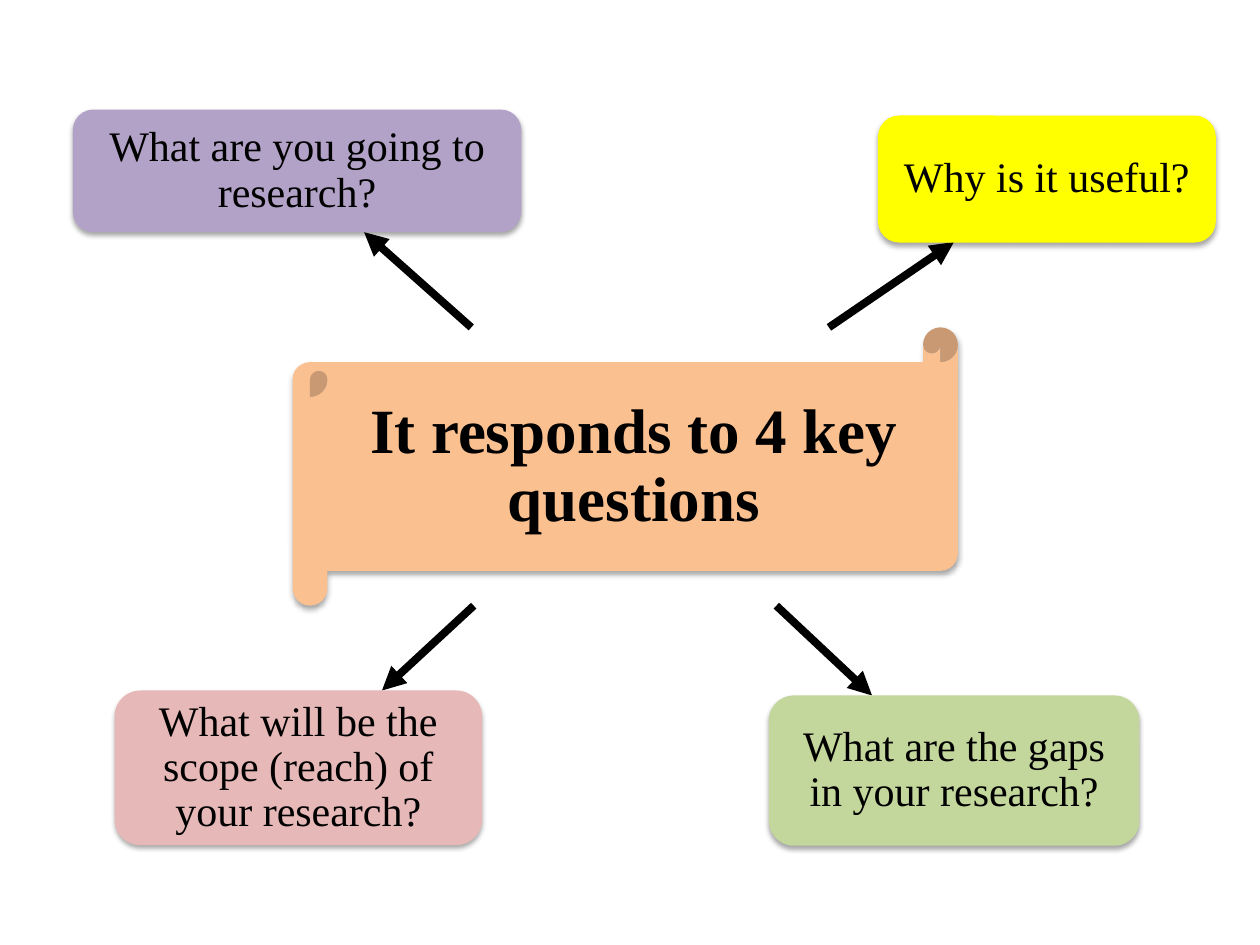
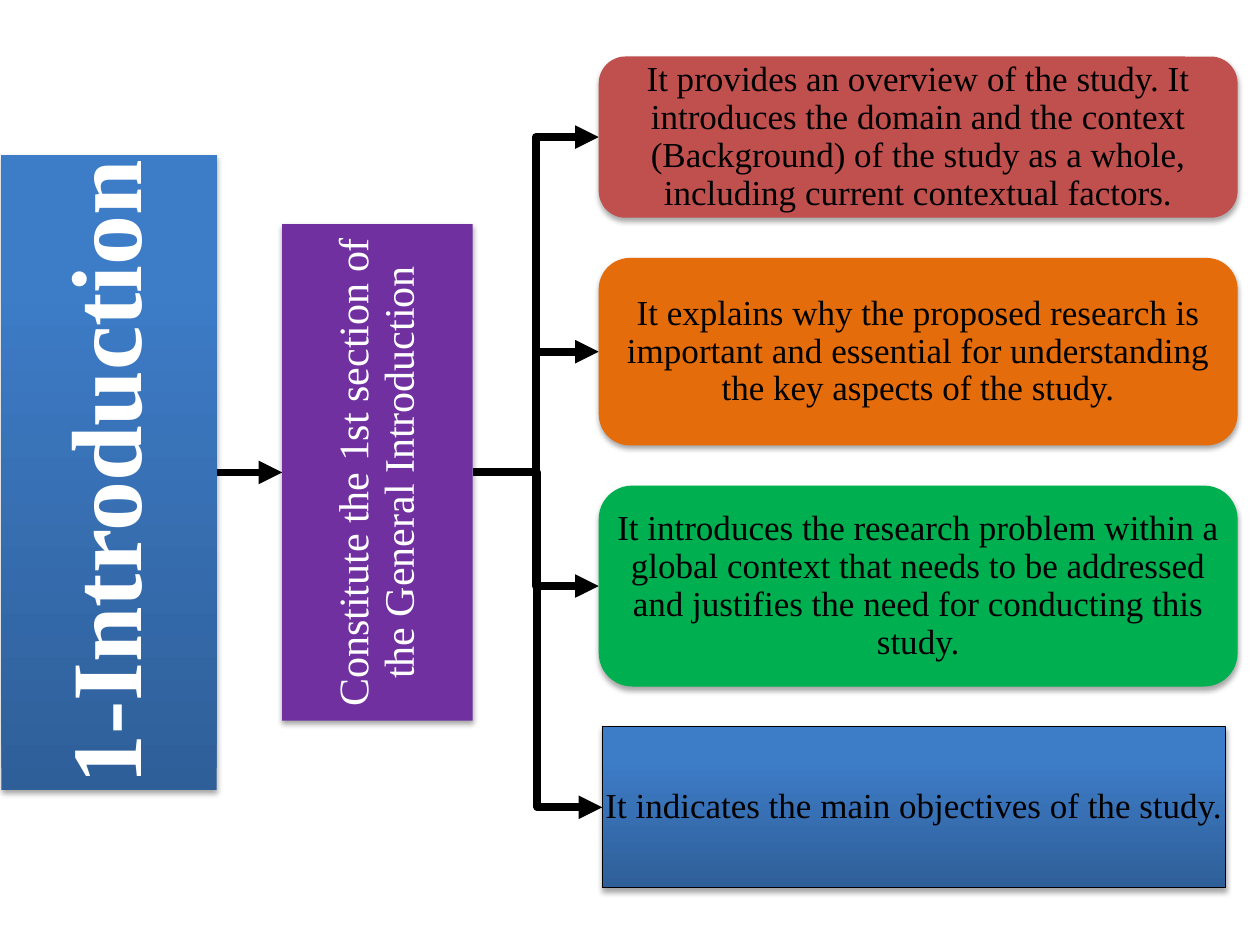
from dataclasses import dataclass
from typing import Optional

from lxml.etree import SubElement
from pptx import Presentation
from pptx.dml.color import RGBColor
from pptx.enum.shapes import MSO_CONNECTOR, MSO_SHAPE
from pptx.enum.text import MSO_ANCHOR, MSO_AUTO_SIZE, PP_ALIGN
from pptx.oxml.ns import qn
from pptx.util import Cm, Pt

FONT = "Times New Roman"
TITLE_ONLY = 5

BLACK = RGBColor(0x00, 0x00, 0x00)
WHITE = RGBColor(0xFF, 0xFF, 0xFF)
PEACH = RGBColor(0xFA, 0xC0, 0x90)
LILAC = RGBColor(0xB3, 0xA2, 0xC7)
YELLOW = RGBColor(0xFF, 0xFF, 0x00)
PINK = RGBColor(0xE6, 0xB9, 0xB8)
LIGHT_GREEN = RGBColor(0xC3, 0xD6, 0x9B)
PURPLE = RGBColor(0x70, 0x30, 0xA0)
RED = RGBColor(0xC0, 0x50, 0x4D)
ORANGE = RGBColor(0xE4, 0x6C, 0x0A)
GREEN = RGBColor(0x00, 0xB0, 0x50)
DARK_BLUE = RGBColor(0x2F, 0x5F, 0x99)
BLUE = RGBColor(0x3D, 0x7C, 0xC7)


@dataclass(frozen=True)
class Area:
    """A rectangle in centimetres."""
    left: float
    top: float
    width: float
    height: float

    @property
    def middle(self) -> float:
        return self.top + self.height / 2

    @property
    def right(self) -> float:
        return self.left + self.width

    def turned(self) -> "Area":
        """The same centre with width and height swapped."""
        shift = (self.width - self.height) / 2
        return Area(self.left + shift, self.top - shift, self.height, self.width)

    def lengths(self) -> tuple:
        return Cm(self.left), Cm(self.top), Cm(self.width), Cm(self.height)


@dataclass(frozen=True)
class Question:
    text: str
    area: Area
    color: RGBColor
    arrow_start: tuple[float, float]
    arrow_end: tuple[float, float]


@dataclass(frozen=True)
class Purpose:
    text: str
    height: float
    color: Optional[RGBColor] = None  # None gives the outlined blue gradient
    left: float = 12.07
    width: float = 12.88


QUESTIONS = [
    Question("What are you going to research?", Area(1.47, 2.21, 9.04, 2.47),
             LILAC, (9.5, 6.6), (7.34, 4.68)),
    Question("Why is it useful?", Area(17.7, 2.33, 6.81, 2.56),
             YELLOW, (16.71, 6.6), (19.23, 4.88)),
    Question("What will be the scope (reach) of your research?", Area(2.31, 13.92, 7.41, 3.12),
             PINK, (9.55, 12.21), (7.7, 13.92)),
    Question("What are the gaps in your research?", Area(15.5, 14.02, 7.47, 3.03),
             LIGHT_GREEN, (15.65, 12.21), (17.58, 14.02)),
]

PURPOSES = [
    Purpose("It provides an overview of the study. It introduces the domain and the context "
            "(Background) of the study as a whole, including current contextual factors.",
            3.25, RED),
    Purpose("It explains why the proposed research is important and essential for "
            "understanding the key aspects of the study.", 3.78, ORANGE),
    Purpose("It introduces the research problem within a global context that needs to be "
            "addressed and justifies the need for conducting this study.", 4.05, GREEN),
    Purpose("It indicates the main objectives of the study.", 3.25, left=12.14, width=12.57),
]
PURPOSE_TOP = 1.14
PURPOSE_GAP = 0.81


def write(shape, text: str, *, size: float, color: RGBColor = BLACK, bold: bool = False,
          inset: float = 0.18, upward: bool = False) -> None:
    frame = shape.text_frame
    frame.word_wrap = True
    frame.auto_size = MSO_AUTO_SIZE.NONE
    frame.vertical_anchor = MSO_ANCHOR.MIDDLE
    frame.margin_left = frame.margin_right = Cm(inset)
    frame.margin_top = frame.margin_bottom = Cm(inset)
    if upward:
        shape.element.txBody.find(qn("a:bodyPr")).set("vert", "vert270")
    paragraph = frame.paragraphs[0]
    paragraph.alignment = PP_ALIGN.CENTER
    paragraph.line_spacing = 0.9
    run = paragraph.add_run()
    run.text = text
    run.font.name = FONT
    run.font.size = Pt(size)
    run.font.bold = bold
    run.font.color.rgb = color


def paint(shape, color: Optional[RGBColor], outlined: bool) -> None:
    """Fill with a colour, or the blue gradient when there is none, over a soft shadow."""
    if color is None:
        shape.fill.gradient()
        shape.fill.gradient_angle = 90
        for stop, (position, shade) in zip(shape.fill.gradient_stops,
                                           [(0, DARK_BLUE), (0.8, BLUE)]):
            stop.position = position
            stop.color.rgb = shade
    else:
        shape.fill.solid()
        shape.fill.fore_color.rgb = color
    if outlined:
        shape.line.color.rgb = BLACK
        shape.line.width = Pt(0.75)
    else:
        shape.line.fill.background()
    shape.shadow.inherit = False
    effects = shape.element.spPr.find(qn("a:effectLst"))
    shadow = SubElement(effects, qn("a:outerShdw"), blurRad=str(Pt(3.1)), dist=str(Pt(1.8)),
                        dir="5400000", rotWithShape="0")
    shadow_color = SubElement(shadow, qn("a:srgbClr"), val=str(BLACK))
    SubElement(shadow_color, qn("a:alpha"), val="35000")


def add_box(slide, preset: MSO_SHAPE, area: Area, color: Optional[RGBColor] = None,
            outlined: bool = False):
    box = slide.shapes.add_shape(preset, *area.lengths())
    paint(box, color, outlined)
    return box


def add_arrow(slide, start: tuple[float, float], end: tuple[float, float],
              route: MSO_CONNECTOR = MSO_CONNECTOR.STRAIGHT) -> None:
    arrow = slide.shapes.add_connector(route, *(Cm(value) for value in (*start, *end)))
    arrow.line.color.rgb = BLACK
    arrow.line.width = Pt(4.5)
    properties = arrow.element.spPr
    SubElement(properties.find(qn("a:ln")), qn("a:tailEnd"), type="triangle")
    SubElement(properties, qn("a:effectLst"))


def place_title(slide, area: Area, panel):
    """Move the slide's title to the area, just in front of its panel."""
    title = slide.shapes.title
    title.left, title.top, title.width, title.height = area.lengths()
    panel.element.addnext(title.element)
    return title


def add_key_questions(deck) -> None:
    slide = deck.slides.add_slide(deck.slide_layouts[TITLE_ONLY])
    scroll = add_box(slide, MSO_SHAPE.HORIZONTAL_SCROLL, Area(5.9, 6.6, 13.41, 5.61), PEACH)
    title = place_title(slide, Area(6.6, 7.31, 12.35, 4.21), scroll)
    write(title, "It responds to 4 key questions", size=36, bold=True, inset=0.25)
    for question in QUESTIONS:
        add_arrow(slide, question.arrow_start, question.arrow_end)
        box = add_box(slide, MSO_SHAPE.ROUNDED_RECTANGLE, question.area, question.color)
        write(box, question.text, size=24)


def add_introduction(deck) -> None:
    slide = deck.slides.add_slide(deck.slide_layouts[TITLE_ONLY])
    title_area = Area(0.03, 3.12, 4.34, 12.8)
    section_area = Area(5.69, 4.52, 3.84, 10.01)
    center = section_area.middle

    panel = add_box(slide, MSO_SHAPE.RECTANGLE, title_area)
    title = place_title(slide, title_area.turned(), panel)
    title.rotation = 270
    write(title, "1-Introduction", size=57, color=WHITE, bold=True, inset=0.09)
    add_arrow(slide, (title_area.right, center), (section_area.left, center))

    top = PURPOSE_TOP
    for purpose in PURPOSES:
        area = Area(purpose.left, top, purpose.width, purpose.height)
        add_arrow(slide, (section_area.right, center), (area.left, area.middle),
                  MSO_CONNECTOR.ELBOW)
        plain = purpose.color is None
        preset = MSO_SHAPE.RECTANGLE if plain else MSO_SHAPE.FLOWCHART_ALTERNATE_PROCESS
        box = add_box(slide, preset, area, purpose.color, outlined=plain)
        write(box, purpose.text, size=20, inset=0.03)
        top += purpose.height + PURPOSE_GAP

    section = add_box(slide, MSO_SHAPE.RECTANGLE, section_area, PURPLE)
    write(section, "Constitute the 1st section of the General Introduction", size=24,
          color=WHITE, inset=0.04, upward=True)


def main() -> None:
    deck = Presentation()
    deck.slide_width, deck.slide_height = Cm(25.4), Cm(19.05)
    background = deck.slide_master.background.fill
    background.solid()
    background.fore_color.rgb = WHITE
    add_key_questions(deck)
    add_introduction(deck)
    deck.save("out.pptx")


if __name__ == "__main__":
    main()
